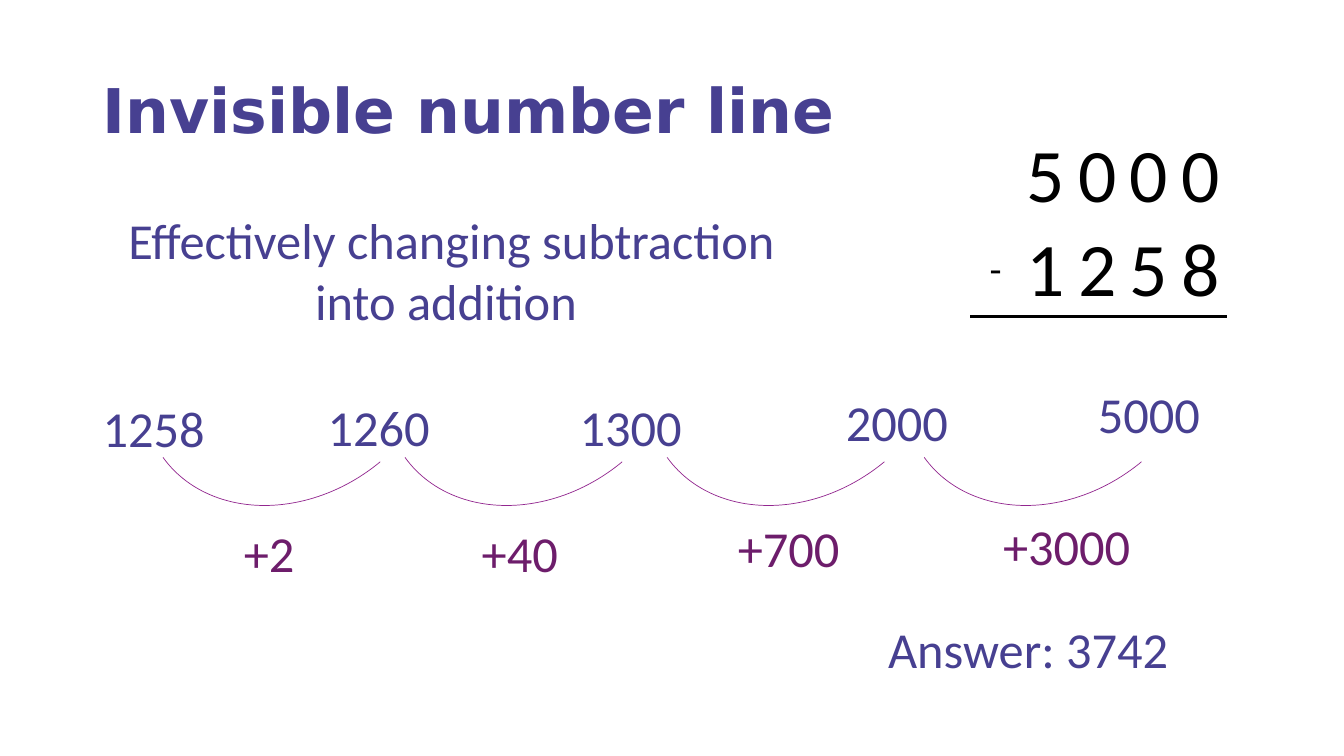
from lxml import etree
from pptx import Presentation
from pptx.dml.color import RGBColor
from pptx.enum.shapes import MSO_SHAPE
from pptx.enum.text import MSO_ANCHOR, MSO_AUTO_SIZE, PP_ALIGN
from pptx.oxml.ns import qn
from pptx.util import Inches, Pt

ARC = MSO_SHAPE.ARC
LEFT, CENTER = PP_ALIGN.LEFT, PP_ALIGN.CENTER
MIDDLE = MSO_ANCHOR.MIDDLE
NO_FIT = MSO_AUTO_SIZE.NONE

COLORS = {"indigo": "474091", "plum": "6D1D6B", "arc": "92278F", "black": "000000"}
SUM_ROWS = [["", "5", "0", "0", "0"], ["-", "1", "2", "5", "8"], [""] * 5]
STOPS = [("1258", 0.92, 3.89), ("1260", 3.15, 3.88), ("1300", 5.65, 3.88),
         ("2000", 8.29, 3.83), ("5000", 10.79, 3.75)]
JUMPS = [("+2", 1.32, 2.32, 5.13), ("+40", 3.72, 4.68, 5.13),
         ("+700", 6.32, 7.22, 5.08), ("+3000", 8.87, 9.85, 5.06)]


def color(name):
    """Return the named colour."""
    return RGBColor.from_string(COLORS[name])


def write(tf, text, size=36, font="Calibri", fill="indigo", bold=False, align=LEFT, spacing=None):
    """Write each line of text as a formatted paragraph."""
    for i, line in enumerate(text.split("\n")):
        p = tf.add_paragraph() if i else tf.paragraphs[0]
        p.alignment = align
        if spacing:
            p.line_spacing = spacing
        r = p.add_run()
        r.text = line
        r.font.size, r.font.name, r.font.bold = Pt(size), font, bold
        r.font.color.rgb = color(fill)


def add_text(s, text, x, y, w, h=0.71, **fmt):
    """Add a wrapped text box."""
    tf = s.shapes.add_textbox(Inches(x), Inches(y), Inches(w), Inches(h)).text_frame
    tf.word_wrap = True
    write(tf, text, **fmt)


def add_title(s, x, y, w, h):
    """Place and fill the title placeholder."""
    sp = s.shapes.title
    sp.left, sp.top, sp.width, sp.height = Inches(x), Inches(y), Inches(w), Inches(h)
    tf = sp.text_frame
    tf.auto_size, tf.vertical_anchor = NO_FIT, MIDDLE
    write(tf, "Invisible number line", size=44, font="DejaVu Sans", bold=True, spacing=0.9)


def add_border(cell, side):
    """Draw a black border on one side of a cell."""
    ln = etree.Element(qn(f"a:{side}"), w=str(Pt(2)))
    fill = etree.SubElement(ln, qn("a:solidFill"))
    etree.SubElement(fill, qn("a:srgbClr"), val=COLORS["black"])
    cell._tc.get_or_add_tcPr().insert(0, ln)


def add_column_sum(s, x, y, w, h):
    """Set out the column subtraction as a table."""
    table = s.shapes.add_table(3, 5, Inches(x), Inches(y), Inches(w), Inches(h)).table
    table.first_row = table.horz_banding = False
    for i, col in enumerate(table.columns):
        col.width = Inches(0.51 if i else 0.49)
    for i, (row, values) in enumerate(zip(table.rows, SUM_ROWS)):
        row.height = Inches(0.87 if i else 0.86)
        for cell, value in zip(row.cells, values):
            cell.fill.background()
            cell.vertical_anchor = MIDDLE
            cell.margin_left = cell.margin_right = cell.margin_top = Inches(0.01)
            cell.margin_bottom = 0
            if value:
                size = 28 if value == "-" else 54
                write(cell.text_frame, value, size=size, fill="black", align=CENTER)
            if i:
                add_border(cell, "lnB" if i == 1 else "lnT")


def add_arc(s, x, y, w, h):
    """Add the curve of one jump."""
    sp = s.shapes.add_shape(ARC, Inches(x), Inches(y), Inches(w), Inches(h))
    sp.adjustments[0], sp.adjustments[1] = 158.247, 0
    sp.rotation = 144.4
    sp.shadow.inherit = False
    sp.fill.background()
    sp.line.color.rgb = color("arc")
    sp.line.width = Pt(0.5)


def add_number_line(s, x, y):
    """Add the stops, jumps and jump labels from the first stop's corner."""
    dx, dy = x - STOPS[0][1], y - STOPS[0][2]
    for text, left, top in STOPS:
        add_text(s, text, left + dx, top + dy, 1.49)
    for text, arc_left, left, top in JUMPS:
        add_arc(s, arc_left + dx, 2.32 + dy, 3.17, 2.59)
        add_text(s, text, left + dx, top + dy, 1.66, fill="plum")


def main():
    """Build the slide and save it."""
    prs = Presentation()
    prs.slide_width, prs.slide_height = Inches(13.33), Inches(7.5)
    s = prs.slides.add_slide(prs.slide_layouts[5])
    add_title(s, 0.92, 0.4, 11.5, 1.45)
    add_column_sum(s, 9.63, 1.29, 2.53, 2.6)
    add_text(s, "Effectively changing subtraction\ninto addition ", 0.92, 2.03, 7.12, 1.31, align=CENTER)
    add_number_line(s, 0.92, 3.89)
    add_text(s, "Answer: 3742", 8.71, 6.08, 3.7)
    prs.save("out.pptx")


if __name__ == "__main__":
    main()
